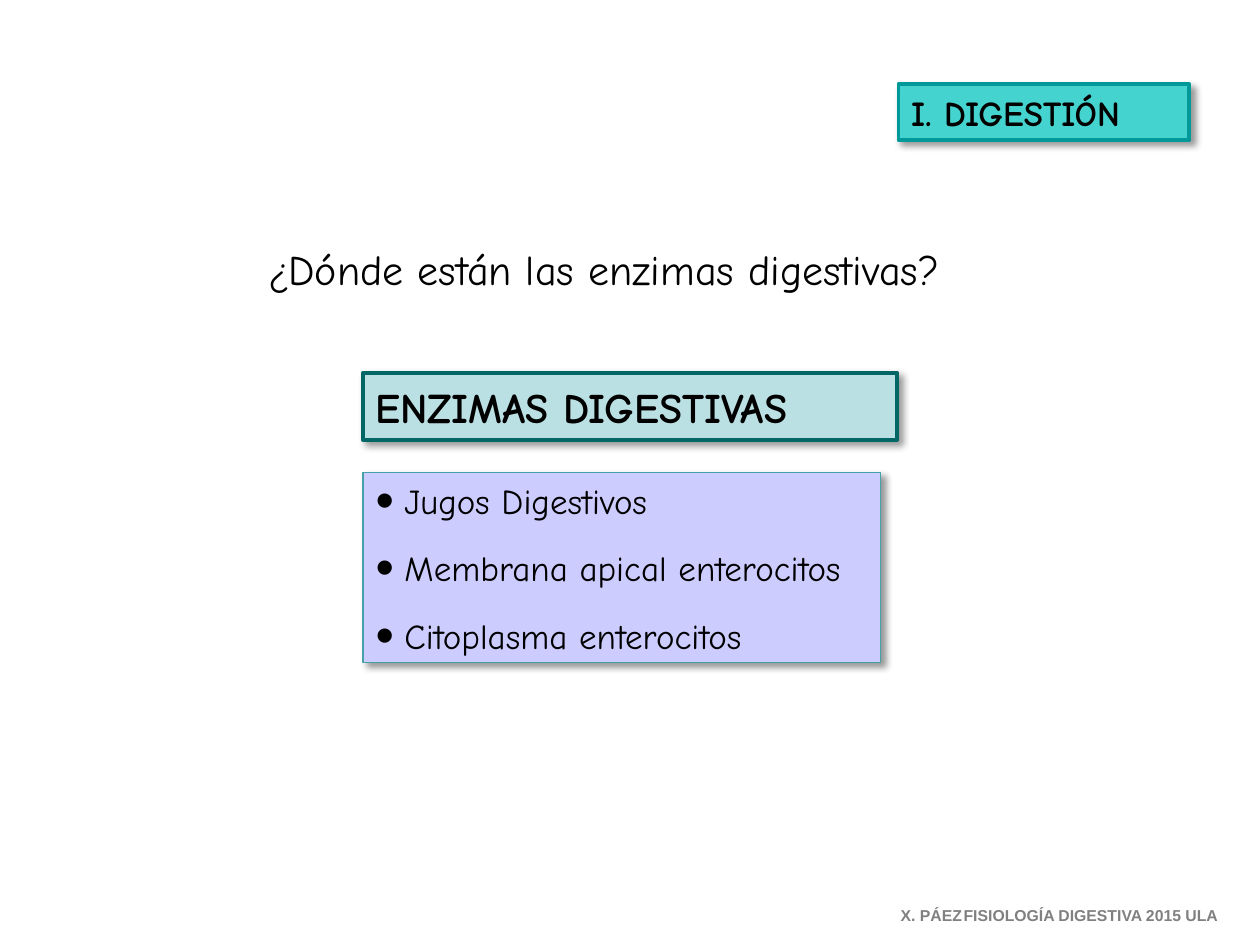
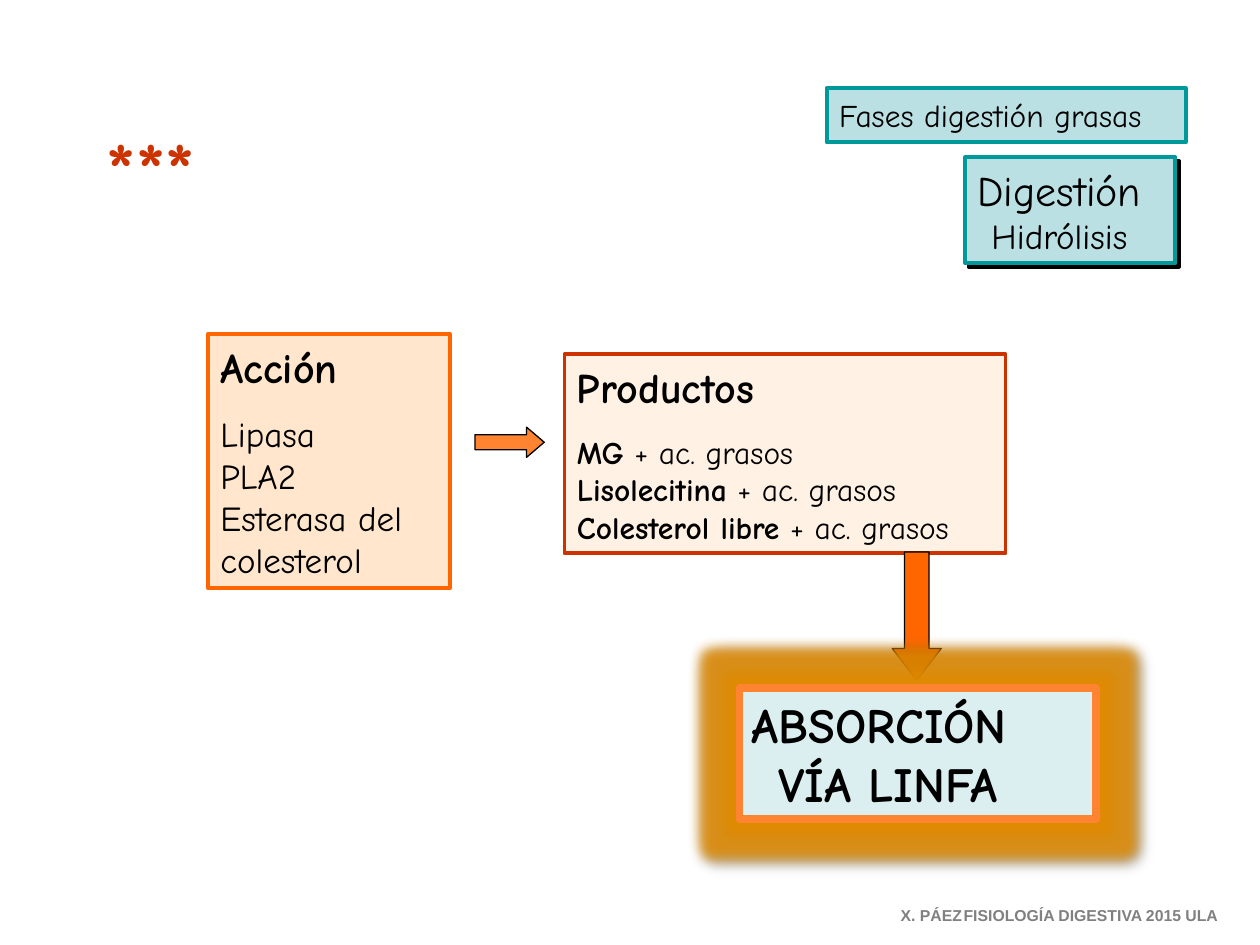
from dataclasses import dataclass
from typing import Optional

from lxml import etree
from pptx import Presentation
from pptx import util as u
from pptx.dml.color import RGBColor
from pptx.enum import shapes, text
from pptx.oxml.ns import qn

FONT = "Comic Neue"
BLACK = "000000"
TEAL = "009999"
PALE_TEAL = "BBE0E3"
ORANGE = "FF6600"
LIGHT_ORANGE = "FF8431"
RED = "CC3300"
FOOTER_TAB = 42.9


@dataclass(frozen=True)
class Line:
    text: str
    size: float
    bold: bool = False
    lead: str = ""
    gap: float = 0
    indent: float = 0
    bullet: bool = False
    color: str = BLACK
    font: str = FONT


@dataclass(frozen=True)
class Shadow:
    blur: float
    dist: float
    alpha: int


@dataclass(frozen=True)
class Box:
    at: tuple[float, float, float, float]
    lines: tuple[Line, ...]
    fill: Optional[str] = None
    line: Optional[str] = None
    weight: float = 2.25
    shadow: Optional[Shadow] = None
    glow: Optional[str] = None


@dataclass(frozen=True)
class Arrow:
    kind: shapes.MSO_SHAPE
    at: tuple[float, float, float, float]
    head: float
    fill: str


SOFT = Shadow(4, 3, 40)
HARD = Shadow(0, 2.8, 100)


def rgb(value: str) -> RGBColor:
    return RGBColor.from_string(value)


def node(tag: str, *children, **attrs):
    el = etree.Element(qn(tag), {k: str(v) for k, v in attrs.items()})
    el.extend(children)
    return el


def effect_color(value: str, alpha: int):
    return node("a:srgbClr", node("a:alpha", val=alpha * 1000), val=value)


def shadow_node(shadow: Shadow):
    return node("a:outerShdw", effect_color(BLACK, shadow.alpha),
                blurRad=u.Pt(shadow.blur), dist=u.Pt(shadow.dist),
                dir=45 * 60000, algn="ctr", rotWithShape=0)


def paint(sp, fill: Optional[str], line: Optional[str], weight: float) -> None:
    if fill:
        sp.fill.solid()
        sp.fill.fore_color.rgb = rgb(fill)
    if line:
        sp.line.color.rgb = rgb(line)
        sp.line.width = u.Pt(weight)


def add_effects(sp, box: Box) -> None:
    sp.shadow.inherit = False
    effects = sp._element.spPr.find(qn("a:effectLst"))
    if box.glow:
        effects.append(node("a:glow", effect_color(box.glow, 85), rad=u.Pt(14)))
    if box.shadow:
        effects.append(shadow_node(box.shadow))


def write_line(p, line: Line) -> None:
    p.alignment = text.PP_ALIGN.LEFT
    p.space_before = u.Pt(line.gap)
    p.font.size = u.Pt(line.size)
    p.font.name = line.font
    p.font.color.rgb = rgb(line.color)
    if line.lead:
        r = p.add_run()
        r.text = line.lead
        r.font.bold = True
    else:
        p.font.bold = line.bold
    p.add_run().text = line.text
    pPr = p._p.get_or_add_pPr()
    pPr.set("marL", str(u.Pt(line.indent)))
    pPr.set("indent", str(u.Pt(-line.indent if line.bullet else 0)))
    marks = [node("a:buNone")]
    if line.bullet:
        marks = [node("a:buSzPct", val=150000), node("a:buChar", char="•")]
    if "\t" in line.text:
        marks.append(node("a:tabLst", node("a:tab", pos=u.Pt(FOOTER_TAB), algn="l")))
    for mark in marks:
        pPr.find(qn("a:defRPr")).addprevious(mark)


def write(sp, lines: tuple[Line, ...]) -> None:
    tf = sp.text_frame
    tf.word_wrap = True
    tf.auto_size = text.MSO_AUTO_SIZE.NONE
    tf.vertical_anchor = text.MSO_ANCHOR.MIDDLE
    tf.margin_left = tf.margin_right = u.Pt(7.2)
    tf.margin_top = tf.margin_bottom = u.Pt(3.6)
    for i, line in enumerate(lines):
        write_line(tf.add_paragraph() if i else tf.paragraphs[0], line)


def draw_box(s, box: Box, placeholder=None):
    at = [u.Pt(v) for v in box.at]
    sp = placeholder
    if sp is not None:
        sp.left, sp.top, sp.width, sp.height = at
    elif box.fill:
        sp = s.shapes.add_shape(shapes.MSO_SHAPE.RECTANGLE, *at)
    else:
        sp = s.shapes.add_textbox(*at)
    if box.fill:
        paint(sp, box.fill, box.line, box.weight)
        add_effects(sp, box)
    write(sp, box.lines)
    return sp


def draw_arrow(s, arrow: Arrow) -> None:
    sp = s.shapes.add_shape(arrow.kind, *(u.Pt(v) for v in arrow.at))
    sp.adjustments[0], sp.adjustments[1] = 0.5, arrow.head
    paint(sp, arrow.fill, BLACK, 0.75)
    sp.shadow.inherit = False


def add_footer(s) -> None:
    draw_box(s, Box((507.6, 514.1, 204.5, 18), (
        Line("X. PÁEZ\tFISIOLOGÍA DIGESTIVA 2015 ULA", 9, True,
             color="808080", font="Arial"),)))


def enzymes_slide(prs) -> None:
    s = prs.slides.add_slide(prs.slide_layouts[1])
    draw_box(s, Box((513.4, 48.2, 166.3, 31.7), (Line("I. DIGESTIÓN", 20, True),),
                    "45D3D0", TEAL, shadow=SOFT), s.shapes.title)
    places = ("Jugos Digestivos", "Membrana apical enterocitos", "Citoplasma enterocitos")
    draw_box(s, Box((207.4, 270, 295.9, 108.7), tuple(
        Line(place, 20, gap=14.5 if i else 0, indent=16.5, bullet=True)
        for i, place in enumerate(places)),
        "CCCCFF", "45A0A7", 0.75, SOFT), s.placeholders[1])
    draw_box(s, Box((207.4, 213.1, 305.3, 38.2), (Line("ENZIMAS DIGESTIVAS", 24, True),),
                    PALE_TEAL, "006666", shadow=SOFT))
    draw_box(s, Box((146.2, 135.4, 429.1, 36),
                    (Line("¿Dónde están las enzimas digestivas?", 24),)))
    add_footer(s)


def fats_slide(prs) -> None:
    s = prs.slides.add_slide(prs.slide_layouts[5])
    draw_box(s, Box((472.3, 50.4, 205.2, 31), (Line("Fases digestión grasas", 18),),
                    PALE_TEAL, TEAL), s.shapes.title)
    draw_box(s, Box((551.5, 90, 120.2, 60.5),
                    (Line("Digestión", 24), Line("Hidrólisis", 20, indent=8)),
                    PALE_TEAL, TEAL, shadow=HARD))
    enzymes = ("Lipasa", "PLA2", "Esterasa del", "colesterol")
    draw_box(s, Box((118.8, 190.8, 138.2, 145.4), (
        Line("Acción", 24, True),
        *(Line(name, 20, gap=0 if i else 12) for i, name in enumerate(enzymes))),
        "FFE6CD", ORANGE))
    products = ("MG", "Lisolecitina", "Colesterol libre")
    draw_box(s, Box((322.6, 202.3, 252, 113.8), (
        Line("Productos", 24, True),
        *(Line(" + ac. grasos", 18, lead=name, gap=0 if i else 12)
          for i, name in enumerate(products))),
        "FFF2E5", RED))
    draw_arrow(s, Arrow(shapes.MSO_SHAPE.RIGHT_ARROW, (271.4, 244.1, 39.6, 17.3),
                        0.585, LIGHT_ORANGE))
    draw_arrow(s, Arrow(shapes.MSO_SHAPE.DOWN_ARROW, (509.8, 315.4, 28.1, 73.4),
                        0.65, ORANGE))
    draw_box(s, Box((422.6, 393.1, 203.8, 74.9),
                    (Line("ABSORCIÓN", 28, True), Line("VÍA LINFA", 28, True, indent=15)),
                    "DCEFF0", LIGHT_ORANGE, 4.5, SOFT, "E08A00"))
    stars = draw_box(s, Box((54, 65.5, 84.2, 59.8), (Line("***", 44, True, color=RED),)))
    rPr = stars.text_frame.paragraphs[0].runs[0]._r.get_or_add_rPr()
    rPr.append(node("a:effectLst", shadow_node(HARD)))
    add_footer(s)


def main() -> None:
    prs = Presentation()
    prs.slide_width, prs.slide_height = u.Pt(720), u.Pt(540)
    enzymes_slide(prs)
    fats_slide(prs)
    prs.save("out.pptx")


if __name__ == "__main__":
    main()
